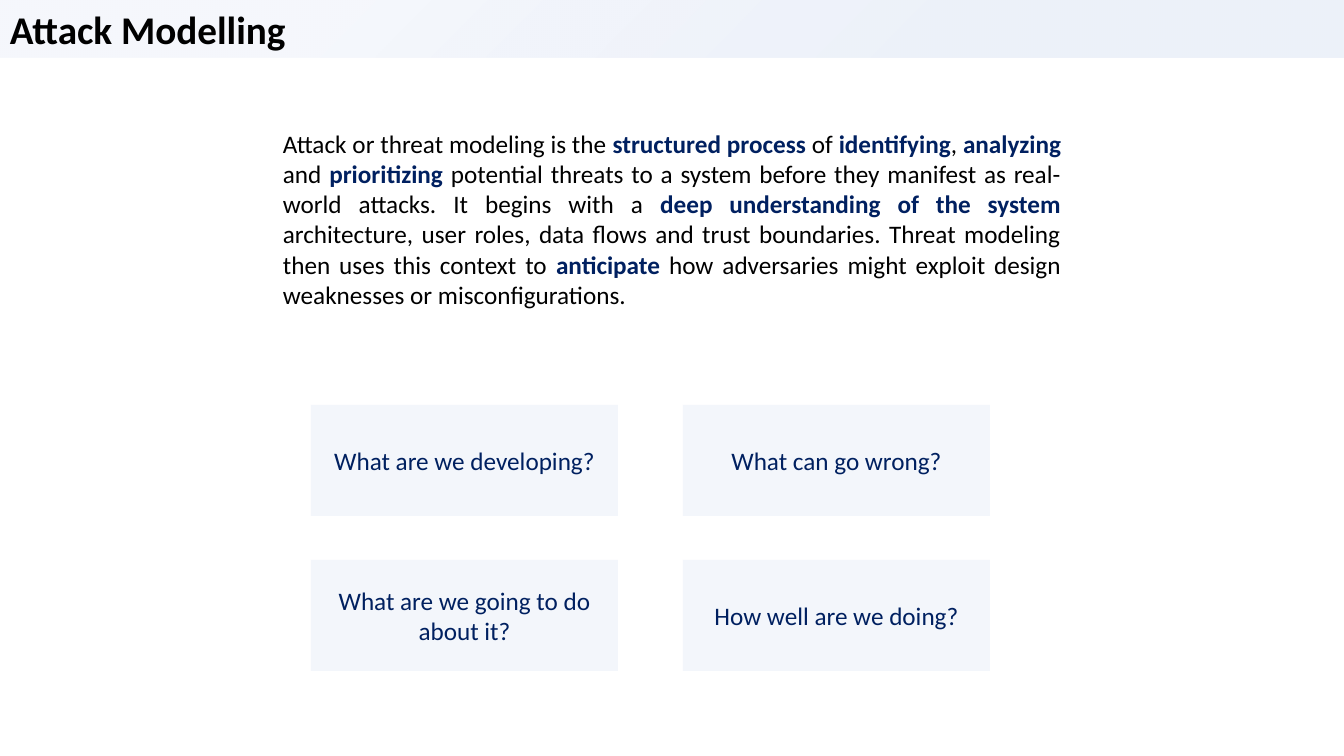
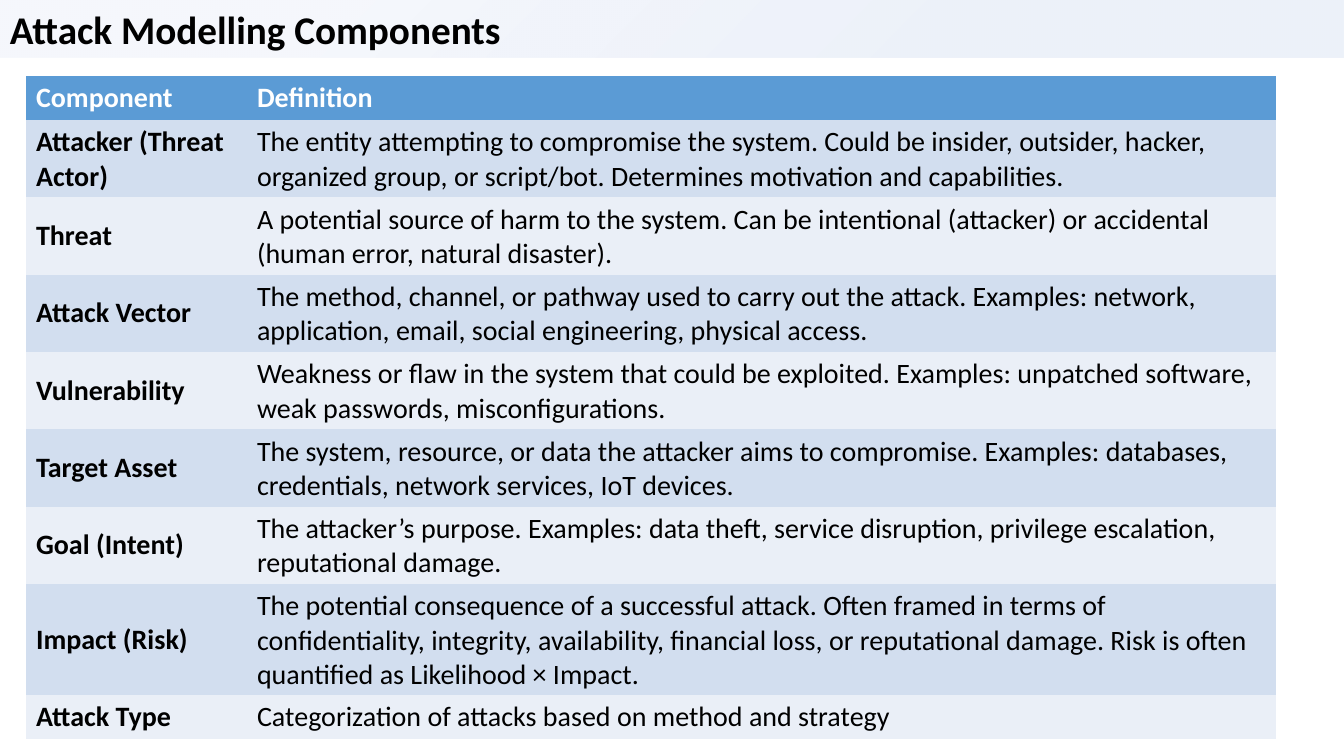
from pptx import Presentation
from pptx.dml.color import RGBColor
from pptx.enum.shapes import MSO_SHAPE
from pptx.enum.text import MSO_ANCHOR, MSO_AUTO_SIZE, PP_ALIGN
from pptx.oxml import parse_xml
from pptx.oxml.ns import nsdecls, qn
from pptx.util import Emu, Pt

RECTANGLE = MSO_SHAPE.RECTANGLE
TOP, MIDDLE = MSO_ANCHOR.TOP, MSO_ANCHOR.MIDDLE
LEFT, CENTER, JUSTIFY = PP_ALIGN.LEFT, PP_ALIGN.CENTER, PP_ALIGN.JUSTIFY
FIT_SHAPE = MSO_AUTO_SIZE.SHAPE_TO_FIT_TEXT

WIDTH, HEIGHT = 1344, 756
BLACK, WHITE, NAVY = "000000", "FFFFFF", "002060"
PALE, HEADER, BAND_TINT = "F3F6FB", "5B9BD5", "4472C4"
ROW_FILLS = ("D2DEEF", "EAEFF7")
PLAIN_TABLE = "{2D5ABB26-0587-4C30-8999-92F81FD0307C}"


def px(length):
    return Emu(round(length * 12192000 / WIDTH))


def color(value):
    return RGBColor.from_string(value)


class Deck:
    font = "Calibri"

    def __init__(self):
        self.deck = Presentation()
        self.deck.slide_width, self.deck.slide_height = px(WIDTH), px(HEIGHT)

    def page(self, title):
        """Start a slide with the shared title band."""
        self.slide = self.deck.slides.add_slide(self.deck.slide_layouts[6])
        band = self.rectangle(0, 0, WIDTH, 58)
        self.tint(band)
        band.text_frame.auto_size = FIT_SHAPE
        self.add_text(band.text_frame, [(title, BLACK, True)], 28)

    def tint(self, shape):
        """Fill with a transparent radial gradient from the lower right corner."""
        stops = "".join(
            f'<a:gs pos="{place}000"><a:srgbClr val="{BAND_TINT}">'
            f'<a:alpha val="{alpha}000"/></a:srgbClr></a:gs>'
            for place, alpha in ((26, 10), (76, 5)))
        gradient = parse_xml(
            f'<a:gradFill {nsdecls("a")}><a:gsLst>{stops}</a:gsLst>'
            '<a:path path="circle"><a:fillToRect l="100000" t="100000"/></a:path>'
            '</a:gradFill>')
        shape._element.spPr.find(qn("a:prstGeom")).addnext(gradient)

    def rectangle(self, left, top, width, height):
        shape = self.slide.shapes.add_shape(
            RECTANGLE, px(left), px(top), px(width), px(height))
        shape.shadow.inherit = False
        shape.line.fill.background()
        return shape

    def add_text(self, frame, spans, size, align=LEFT, anchor=TOP):
        """Add (text, color, bold) spans as one paragraph."""
        frame.word_wrap = True
        frame.vertical_anchor = anchor
        para = frame.paragraphs[0]
        para.alignment = align
        for text, ink, bold in spans:
            span = para.add_run()
            span.text = text
            span.font.name, span.font.size = self.font, Pt(size)
            span.font.bold = bold
            span.font.color.rgb = color(ink)

    def card(self, left, top, width, height, text):
        box = self.rectangle(left, top, width, height)
        box.fill.solid()
        box.fill.fore_color.rgb = color(PALE)
        self.add_text(box.text_frame, [(text, NAVY, False)], 18, CENTER, MIDDLE)

    def paragraph(self, left, top, width, height, spans):
        box = self.slide.shapes.add_textbox(px(left), px(top), px(width), px(height))
        box.text_frame.auto_size = FIT_SHAPE
        self.add_text(box.text_frame, spans, 18, JUSTIFY)

    def table(self, left, top, widths, heights, rows):
        table = self.slide.shapes.add_table(
            len(rows), len(widths), px(left), px(top),
            px(sum(widths)), px(sum(heights))).table
        table._tbl.tblPr.find(qn("a:tableStyleId")).text = PLAIN_TABLE
        for column, width in zip(table.columns, widths):
            column.width = px(width)
        for index, (height, texts) in enumerate(zip(heights, rows)):
            table.rows[index].height = px(height)
            is_header = index == 0
            fill = HEADER if is_header else ROW_FILLS[(index - 1) % 2]
            ink = WHITE if is_header else BLACK
            for place, text in enumerate(texts):
                cell = table.cell(index, place)
                cell.fill.solid()
                cell.fill.fore_color.rgb = color(fill)
                cell.vertical_anchor = MIDDLE
                bold = is_header or place == 0
                self.add_text(cell.text_frame, [(text, ink, bold)], 20)


# Plain and emphasized phrases alternate, starting with a plain one.
INTRO = [
    "Attack or threat modeling is the ", "structured process ", "of ",
    "identifying", ", ", "analyzing ", "and ", "prioritizing",
    " potential threats to a system before they manifest as real-world attacks. "
    "It begins with a ", "deep understanding of the system ",
    "architecture, user roles, data flows and trust boundaries. "
    "Threat modeling then uses this context to ", "anticipate",
    " how adversaries might exploit design weaknesses or misconfigurations.",
]
QUESTIONS = [
    "What are we developing?", "What can go wrong?",
    "What are we going to do about it?", "How well are we doing?",
]
COMPONENTS = [
    ("Component", "Definition"),
    ("Attacker (Threat Actor)",
     "The entity attempting to compromise the system. Could be insider, outsider, "
     "hacker, organized group, or script/bot. Determines motivation and capabilities."),
    ("Threat",
     "A potential source of harm to the system. Can be intentional (attacker) or "
     "accidental (human error, natural disaster)."),
    ("Attack Vector",
     "The method, channel, or pathway used to carry out the attack. Examples: network, "
     "application, email, social engineering, physical access."),
    ("Vulnerability",
     "Weakness or flaw in the system that could be exploited. Examples: unpatched "
     "software, weak passwords, misconfigurations."),
    ("Target Asset",
     "The system, resource, or data the attacker aims to compromise. Examples: "
     "databases, credentials, network services, IoT devices."),
    ("Goal (Intent)",
     "The attacker’s purpose. Examples: data theft, service disruption, privilege "
     "escalation, reputational damage."),
    ("Impact (Risk)",
     "The potential consequence of a successful attack. Often framed in terms of "
     "confidentiality, integrity, availability, financial loss, or reputational "
     "damage. Risk is often quantified as Likelihood × Impact."),
    ("Attack Type", "Categorization of attacks based on method and strategy"),
]


def main():
    deck = Deck()

    deck.page("Attack Modelling")
    deck.paragraph(273, 123, 798, 194, [
        (text, NAVY if index % 2 else BLACK, index % 2 == 1)
        for index, text in enumerate(INTRO)])
    for index, question in enumerate(QUESTIONS):
        row, column = divmod(index, 2)
        deck.card(311 + 372 * column, 405 + 155 * row, 307, 111, question)

    deck.page("Attack Modelling Components")
    one_line, two_lines, three_lines = 44, 77, 111
    heights = [one_line] + [two_lines] * 6 + [three_lines, one_line]
    deck.table(26, 76, [221, 1029], heights, COMPONENTS)

    deck.deck.save("out.pptx")


if __name__ == "__main__":
    main()
